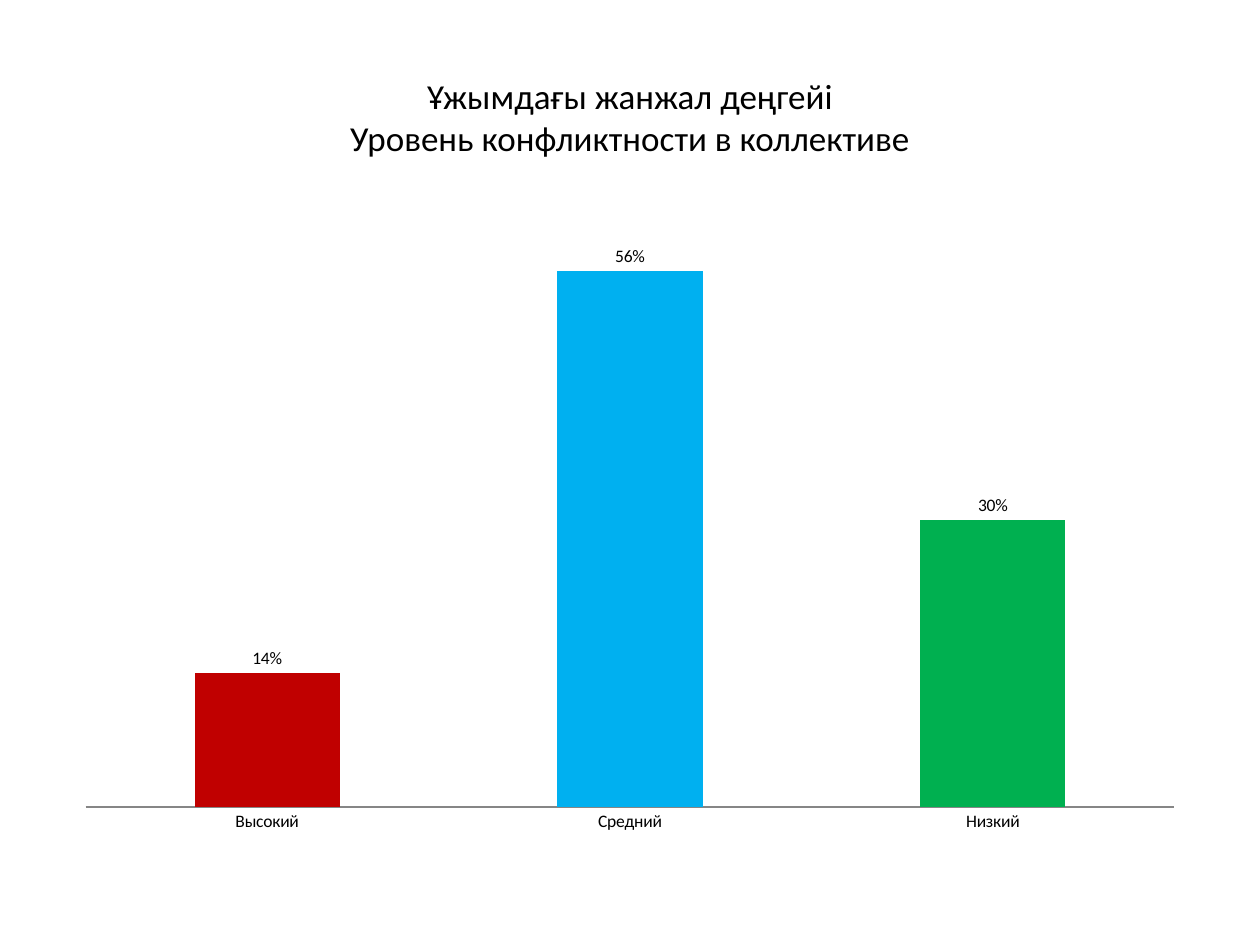
from pptx import Presentation
from pptx import util as u
from pptx.chart.data import CategoryChartData
from pptx.dml.color import RGBColor
from pptx.enum import chart as c, text

COLOURS = {"text": "000000", "axis": "868686"}
LEVELS = [("Высокий", 0.14, "C00000"),
          ("Средний", 0.56, "00B0F0"),
          ("Низкий", 0.30, "00B050")]
FONT = "Calibri"

presentation = Presentation()
presentation.slide_width, presentation.slide_height = u.Inches(10), u.Inches(7.5)
width, height = presentation.slide_width, presentation.slide_height
margin = int(width * 0.05)
content_width = width - 2 * margin

slide = presentation.slides.add_slide(presentation.slide_layouts[5])

title = slide.shapes.title
title.left, title.top = margin, int(height * 0.04)
title.width, title.height = content_width, u.Inches(1.25)
frame = title.text_frame
frame.text = "Ұжымдағы жанжал деңгейі\vУровень конфликтности в коллективе"
frame.vertical_anchor = text.MSO_ANCHOR.MIDDLE
paragraph = frame.paragraphs[0]
paragraph.alignment = text.PP_ALIGN.CENTER
paragraph.font.name = FONT
paragraph.font.size = u.Pt(20)
paragraph.font.color.rgb = RGBColor.from_string(COLOURS["text"])

data = CategoryChartData(number_format="0%")
data.categories = [name for name, _, _ in LEVELS]
data.add_series("Series 1", [share for _, share, _ in LEVELS])
chart = slide.shapes.add_chart(
    c.XL_CHART_TYPE.COLUMN_CLUSTERED, margin, u.Inches(1.75),
    content_width, int(height * 0.66), data).chart
chart.has_title = False
chart.has_legend = False
chart.font.name = FONT
chart.font.size = u.Pt(10)
chart.font.color.rgb = RGBColor.from_string(COLOURS["text"])

category_axis = chart.category_axis
category_axis.major_tick_mark = c.XL_TICK_MARK.NONE
category_axis.format.line.color.rgb = RGBColor.from_string(COLOURS["axis"])

value_axis = chart.value_axis
value_axis.visible = False
value_axis.has_major_gridlines = False
value_axis.minimum_scale, value_axis.maximum_scale = 0, 0.6

plot = chart.plots[0]
plot.gap_width = 150
plot.vary_by_categories = False
plot.has_data_labels = True
labels = plot.data_labels
labels.show_value = True
labels.number_format = "0%"
labels.number_format_is_linked = False
labels.position = c.XL_LABEL_POSITION.OUTSIDE_END

for index, (_, _, colour) in enumerate(LEVELS):
    fill = plot.series[0].points[index].format.fill
    fill.solid()
    fill.fore_color.rgb = RGBColor.from_string(colour)

presentation.save("out.pptx")
